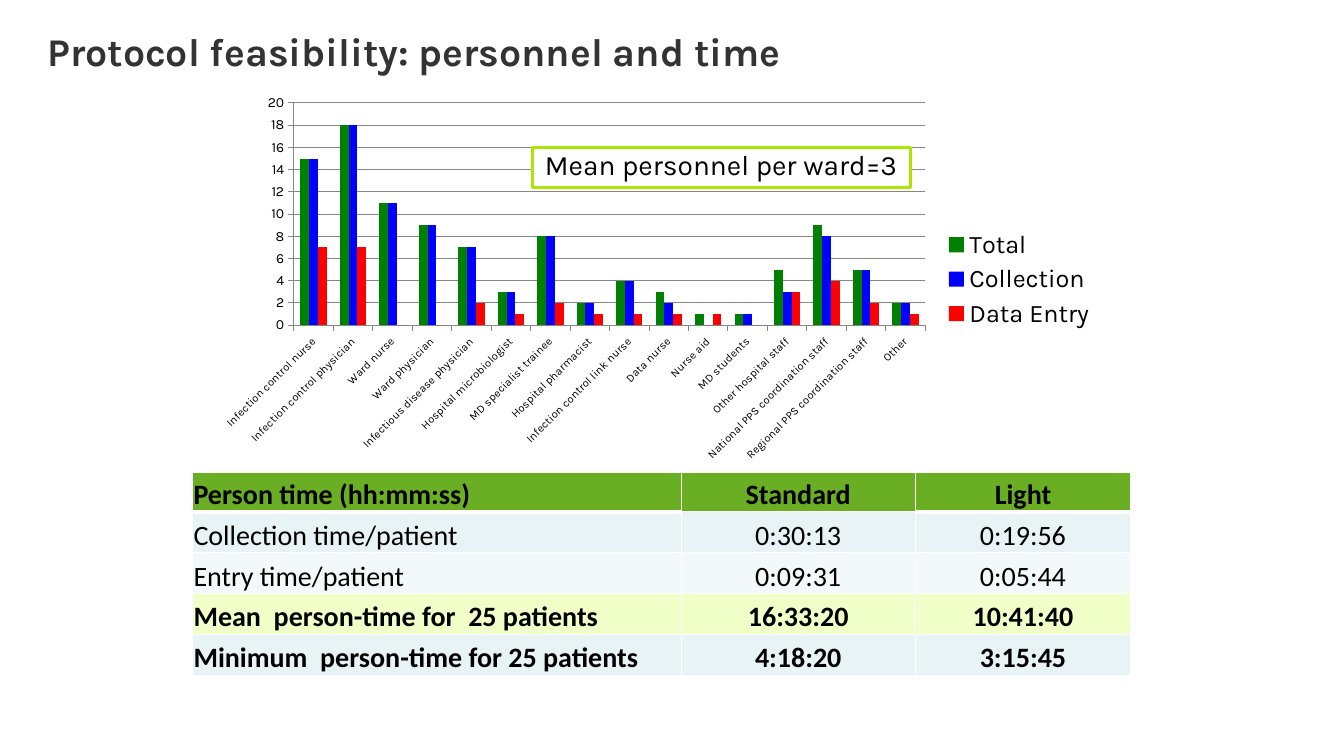
"""Build a slide on the personnel and time a survey protocol needs."""
from dataclasses import dataclass

from lxml import etree
from pptx import Presentation
from pptx import util as u
from pptx.chart.data import CategoryChartData
from pptx.dml.color import RGBColor
from pptx.enum import chart as ch
from pptx.enum import shapes, text
from pptx.oxml import ns, parse_xml

WIDE, HIGH = u.Inches(13.33), u.Inches(7.5)
COLS, ROWS = 160, 90
FONT, BODY = "Karla", "Calibri"
HUES = {
    "title": "333333", "ink": "000000", "white": "FFFFFF", "grid": "878787",
    "head": "69AE23", "band": "E7F3F4", "pale": "F3F9FA", "key": "F1FFC9",
    "edge": "AAE600", "green": "008000", "blue": "0000FF", "red": "FF0000",
}


@dataclass
class Box:
    """Hold a place in grid columns and rows."""
    left: float
    top: float
    wide: float
    high: float

    def spot(self) -> tuple[int, int, int, int]:
        """Give the place in slide units."""
        return (int(self.left * WIDE / COLS), int(self.top * HIGH / ROWS),
                int(self.wide * WIDE / COLS), int(self.high * HIGH / ROWS))


@dataclass
class Series:
    """Hold one set of bars."""
    name: str
    hue: str
    vals: tuple[int, ...]


@dataclass
class Row:
    """Hold one table row."""
    cells: tuple[str, str, str]
    hue: str
    bold: bool


TITLE = Box(5.64, 3.84, 135.36, 10.44)
CHART = Box(24.24, 10.44, 107.4, 45.6)
TABLE = Box(22.92, 56.04, 111.72, 24.4)
NOTE = Box(63.36, 17.52, 45, 4.8)
SPANS = (58.2, 27.84, 25.68)
PLOT = {"x": 0.1, "y": 0.04, "w": 0.7, "h": 0.58}

STAFF = (
    "Infection control nurse", "Infection control physician", "Ward nurse",
    "Ward physician", "Infectious disease physician", "Hospital microbiologist",
    "MD specialist trainee", "Hospital pharmacist",
    "Infection control link nurse", "Data nurse", "Nurse aid", "MD students",
    "Other hospital staff", "National PPS coordination staff",
    "Regional PPS coordination staff", "Other",
)
BARS = (
    Series("Total", "green", (15, 18, 11, 9, 7, 3, 8, 2, 4, 3, 1, 1, 5, 9, 5, 2)),
    Series("Collection", "blue", (15, 18, 11, 9, 7, 3, 8, 2, 4, 2, 0, 1, 3, 8, 5, 2)),
    Series("Data Entry", "red", (7, 7, 0, 0, 2, 1, 2, 1, 1, 1, 1, 0, 3, 4, 2, 1)),
)
TIMES = (
    Row(("Person time (hh:mm:ss)", "Standard", "Light"), "head", True),
    Row(("Collection time/patient", "0:30:13", "0:19:56"), "band", False),
    Row(("Entry time/patient", "0:09:31", "0:05:44"), "pale", False),
    Row(("Mean  person-time for  25 patients", "16:33:20", "10:41:40"), "key", True),
    Row(("Minimum  person-time for 25 patients", "4:18:20", "3:15:45"), "band", True),
)


def tint(hue: str) -> RGBColor:
    """Look up a colour."""
    return RGBColor.from_string(HUES[hue])


def style(font, size: float, hue: str = "ink", name: str = FONT,
          bold: bool = False) -> None:
    """Format a font."""
    font.name, font.size, font.bold = name, u.Pt(size), bold
    font.color.rgb = tint(hue)


def place(shape, box: Box) -> None:
    """Move a shape to its box."""
    shape.left, shape.top, shape.width, shape.height = box.spot()


def add_title(slide) -> None:
    """Fill the title placeholder."""
    title = slide.shapes.title
    place(title, TITLE)
    frame = title.text_frame
    frame.margin_left = frame.margin_right = 0
    frame.margin_top = frame.margin_bottom = 0
    frame.vertical_anchor = text.MSO_ANCHOR.TOP
    frame.auto_size = text.MSO_AUTO_SIZE.NONE
    frame.text = "Protocol feasibility: personnel and time"
    para = frame.paragraphs[0]
    para.alignment, para.line_spacing = text.PP_ALIGN.LEFT, 0.9
    style(para.runs[0].font, 28, "title", bold=True)


def fix_plot(chart) -> None:
    """Pin the inner plot area to its shares of the chart."""
    area = chart._chartSpace.chart.plotArea
    for old in area.findall(ns.qn("c:layout")):
        area.remove(old)
    parts = "".join(f'<c:{side}Mode val="edge"/>' for side in "xy")
    parts += "".join(f'<c:{key} val="{val}"/>' for key, val in PLOT.items())
    area.insert(0, parse_xml(
        f'<c:layout {ns.nsdecls("c")}><c:manualLayout>'
        f'<c:layoutTarget val="inner"/>{parts}</c:manualLayout></c:layout>'))


def add_bars(slide) -> None:
    """Draw the clustered columns."""
    data = CategoryChartData()
    data.categories = STAFF
    for bar in BARS:
        data.add_series(bar.name, bar.vals)
    chart = slide.shapes.add_chart(
        ch.XL_CHART_TYPE.COLUMN_CLUSTERED, *CHART.spot(), data).chart
    style(chart.font, 18)
    chart.has_title = False
    chart.has_legend = True
    chart.legend.position = ch.XL_LEGEND_POSITION.RIGHT
    chart.legend.include_in_layout = False
    plot = chart.plots[0]
    plot.gap_width, plot.overlap, plot.vary_by_categories = 150, 0, False
    for series, bar in zip(plot.series, BARS):
        series.format.fill.solid()
        series.format.fill.fore_color.rgb = tint(bar.hue)
    for axis, size in ((chart.category_axis, 8), (chart.value_axis, 10)):
        style(axis.tick_labels.font, size)
        axis.major_tick_mark = ch.XL_TICK_MARK.OUTSIDE
        axis.format.line.color.rgb = tint("grid")
    chart.category_axis.tick_labels.font._element.getparent().getparent().getparent().find(
        ns.qn("a:bodyPr")).set("rot", "-2700000")
    scale = chart.value_axis
    scale.minimum_scale, scale.maximum_scale, scale.major_unit = 0, 20, 2
    scale.has_major_gridlines = True
    scale.major_gridlines.format.line.color.rgb = tint("grid")
    fix_plot(chart)


def edge(cell, side: str, size: float) -> None:
    """Add a white border to one side of a cell."""
    line = etree.SubElement(cell._tc.get_or_add_tcPr(), ns.qn(f"a:ln{side}"),
                            w=str(u.Pt(size)))
    fill = etree.SubElement(line, ns.qn("a:solidFill"))
    etree.SubElement(fill, ns.qn("a:srgbClr"), val=HUES["white"])


def add_times(slide) -> None:
    """Draw the table of times."""
    table = slide.shapes.add_table(len(TIMES), len(SPANS), *TABLE.spot()).table
    table.first_row = table.horz_banding = False
    for col, span in zip(table.columns, SPANS):
        col.width = int(span * WIDE / COLS)
    for i, row in enumerate(TIMES):
        for j, words in enumerate(row.cells):
            cell = table.cell(i, j)
            thick = 1 if j == 1 else 3
            sizes = {"L": 1, "R": 1,
                     "T": 3 if i == 0 else thick if i == 1 else 1,
                     "B": thick if i == 0 else 1}
            for side, size in sizes.items():
                edge(cell, side, size)
            cell.fill.solid()
            cell.fill.fore_color.rgb = tint(row.hue)
            cell.margin_left = cell.margin_right = cell.margin_top = u.Inches(0.01)
            cell.margin_bottom = 0
            cell.vertical_anchor = text.MSO_ANCHOR.BOTTOM
            cell.text_frame.text = words
            para = cell.text_frame.paragraphs[0]
            para.alignment = text.PP_ALIGN.CENTER if j else text.PP_ALIGN.LEFT
            style(para.runs[0].font, 20, name=BODY, bold=row.bold)


def add_note(slide) -> None:
    """Draw the framed note over the chart."""
    note = slide.shapes.add_shape(shapes.MSO_SHAPE.RECTANGLE, *NOTE.spot())
    note.shadow.inherit = False
    note.fill.solid()
    note.fill.fore_color.rgb = tint("white")
    note.line.color.rgb, note.line.width = tint("edge"), u.Pt(2)
    frame = note.text_frame
    frame.word_wrap = True
    frame.auto_size = text.MSO_AUTO_SIZE.SHAPE_TO_FIT_TEXT
    frame.text = "Mean personnel per ward=3"
    para = frame.paragraphs[0]
    para.alignment, para.line_spacing = text.PP_ALIGN.CENTER, 0.85
    style(para.runs[0].font, 20)


def main() -> None:
    """Build and save the deck."""
    deck = Presentation()
    deck.slide_width, deck.slide_height = WIDE, HIGH
    slide = deck.slides.add_slide(deck.slide_layouts[5])
    for draw in (add_title, add_bars, add_times, add_note):
        draw(slide)
    deck.save("out.pptx")


if __name__ == "__main__":
    main()
